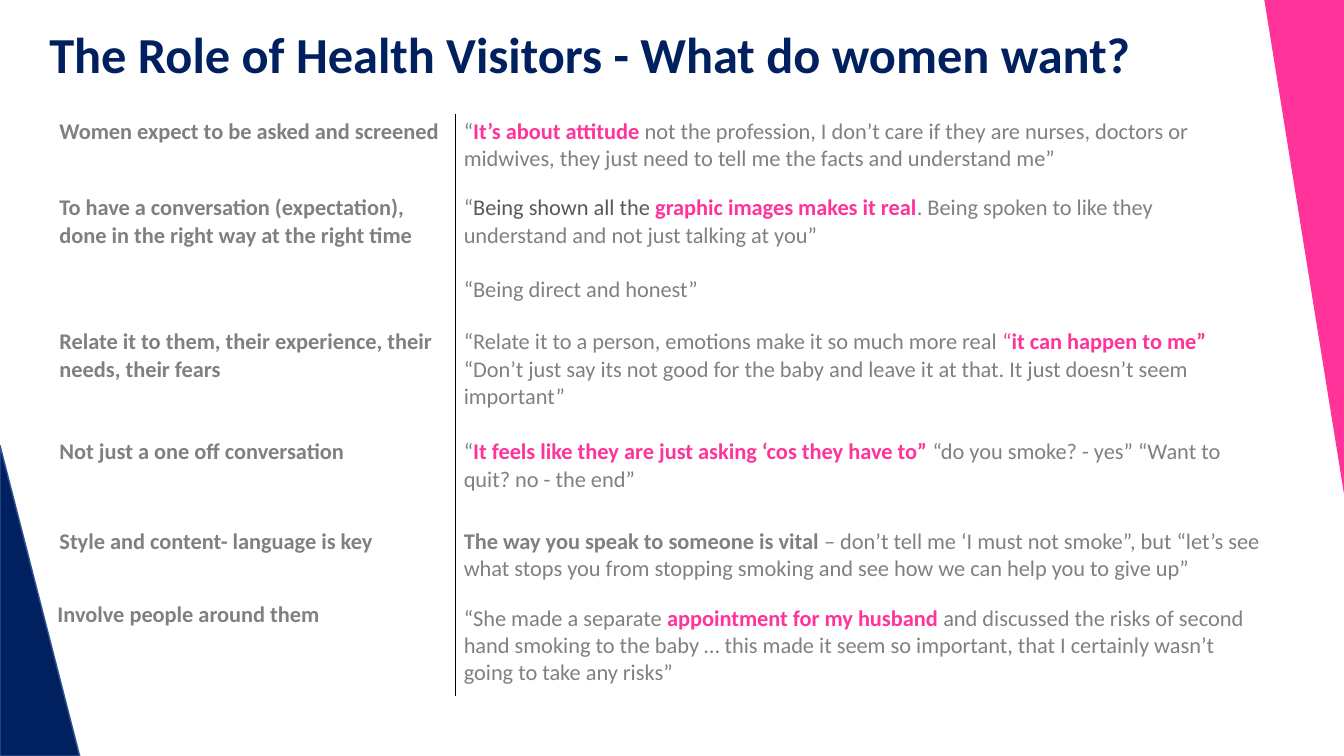
"""Build the slide on what women want from health visitors."""
from typing import Any, NamedTuple, Optional

from lxml import etree
from pptx import Presentation
from pptx import util as u
from pptx.dml.color import RGBColor
from pptx.enum import shapes, text
from pptx.oxml import ns

NAVY = RGBColor(0x00, 0x20, 0x60)
EDGE = RGBColor(0x32, 0x54, 0x91)
PINK = RGBColor(0xFF, 0x33, 0x99)
GREY = RGBColor(0x80, 0x80, 0x80)
DARK = RGBColor(0x59, 0x59, 0x59)
BLACK = RGBColor(0x00, 0x00, 0x00)

BODY = {"name": "Calibri", "size": u.Pt(16), "bold": False}
BOLD = {**BODY, "bold": True}
HEADING = {**BOLD, "size": u.Pt(36)}
NORMAL_INSETS = {"margin_left": u.Inches(0.08), "margin_right": u.Inches(0.08),
                 "margin_top": u.Inches(0.04), "margin_bottom": u.Inches(0.04)}
TIGHT_INSETS = {"margin_left": u.Inches(0.06), "margin_right": u.Inches(0.06),
                "margin_top": 0, "margin_bottom": 0}


class Run(NamedTuple):
    text: str
    color: RGBColor = GREY
    fmt: dict = BODY


class Para(NamedTuple):
    runs: list[Run]
    before: float = 0


class Row(NamedTuple):
    height: float
    theme: str
    quotes: list[Para]
    insets: dict = NORMAL_INSETS


class Triangle(NamedTuple):
    left: float
    top: float
    width: float
    height: float
    fill: RGBColor
    line: Optional[RGBColor] = None
    rotation: float = 0


def pink(words: str) -> Run:
    return Run(words, PINK, BOLD)


TRIANGLES = [
    Triangle(0, 4.42, 0.79, 3.08, NAVY, EDGE),
    Triangle(12.54, 0, 0.79, 4.9, PINK, rotation=180),
]
COLUMNS = [4.01, 8.07]
ROWS = [
    Row(0.76, "Women expect to be asked and screened", [Para([
        Run("“"), pink("It’s about attitude "),
        Run("not the profession, I don’t care if they are nurses, doctors or midwives, "
            "they just need to tell me the facts and understand me”")])]),
    Row(1.33, "To have a conversation (expectation), done in the right way at the right time", [
        Para([Run("“"), Run("Being shown all the ", DARK), pink("graphic images makes it real"),
              Run(". Being spoken to like they understand and not just talking at you”")]),
        Para([Run("“Being direct and honest”")], before=19.5)]),
    Row(1.09, "Relate it to them, their experience, their needs, their fears", [
        Para([Run("“Relate it to a person, emotions make it so much more real "),
              Run("“", PINK), pink("it can happen to me”")]),
        Para([Run("“Don’t just say its not good for the baby and leave it at that. "
                  "It just doesn’t seem important”")])]),
    Row(0.89, "Not just a one off conversation", [Para([
        Run("“"), pink("It feels like they are just asking ‘cos they have to” "),
        Run("“do you smoke? - yes” “Want to quit? no - the end”")])]),
    Row(0.76, "Style and content- language is key", [Para([
        Run("The way you speak to someone is vital ", fmt=BOLD),
        Run("– don’t tell me ‘I must not smoke”, but “let’s see what stops you from "
            "stopping smoking and see how we can help you to give up”")])]),
    Row(0.95, "Involve people around them", [Para([
        Run("“She made a separate "), pink("appointment for my husband "),
        Run("and discussed the risks of second hand smoking to the baby … this made it "
            "seem so important, that I certainly wasn’t going to take any risks”")])],
        TIGHT_INSETS),
]


def apply(obj: Any, values: dict) -> None:
    """Set every named attribute on the object."""
    for name, value in values.items():
        setattr(obj, name, value)


def write(tf: Any, paras: list[Para]) -> None:
    """Fill a text frame with formatted paragraphs."""
    for i, para in enumerate(paras):
        p = tf.paragraphs[0] if i == 0 else tf.add_paragraph()
        if para.before:
            p.space_before = u.Pt(para.before)
        for run in para.runs:
            r = p.add_run()
            r.text = run.text
            apply(r.font, run.fmt)
            r.font.color.rgb = run.color


def set_borders(cell: Any, visible: str) -> None:
    """Draw one side of a cell in black and clear the others."""
    tc_pr = cell._tc.get_or_add_tcPr()
    for side in ("lnL", "lnR", "lnT", "lnB"):
        ln = etree.SubElement(tc_pr, ns.qn(f"a:{side}"), w=str(u.Pt(1)))
        if side == visible:
            fill = etree.SubElement(ln, ns.qn("a:solidFill"))
            etree.SubElement(fill, ns.qn("a:srgbClr"), val=str(BLACK))
        else:
            etree.SubElement(ln, ns.qn("a:noFill"))


def add_triangle(s: Any, item: Triangle) -> None:
    """Add a corner triangle."""
    box = map(u.Inches, (item.left, item.top, item.width, item.height))
    sp = s.shapes.add_shape(shapes.MSO_SHAPE.RIGHT_TRIANGLE, *box)
    sp.shadow.inherit = False
    sp.rotation = item.rotation
    sp.fill.solid()
    sp.fill.fore_color.rgb = item.fill
    if item.line is None:
        sp.line.fill.background()
    else:
        sp.line.color.rgb = item.line
        sp.line.width = u.Pt(1)


def add_title(s: Any, words: str) -> None:
    """Add the slide heading."""
    sp = s.shapes.add_textbox(*map(u.Inches, (0.39, 0.11, 11.78, 0.92)))
    tf = sp.text_frame
    apply(tf, {"word_wrap": True, "vertical_anchor": text.MSO_ANCHOR.MIDDLE})
    write(tf, [Para([Run(words, NAVY, HEADING)])])
    tf.paragraphs[0].line_spacing = 0.9


def add_quotes(s: Any) -> None:
    """Add the table of themes and quotations."""
    size = (sum(COLUMNS), sum(row.height for row in ROWS))
    table = s.shapes.add_table(len(ROWS), len(COLUMNS),
                               *map(u.Inches, (0.51, 1.13, *size))).table
    apply(table, {"first_row": False, "horz_banding": False})
    for column, width in zip(table.columns, COLUMNS):
        column.width = u.Inches(width)
    for i, row in enumerate(ROWS):
        table.rows[i].height = u.Inches(row.height)
        theme = [Para([Run(row.theme, fmt=BOLD)])]
        parts = [(theme, row.insets, "lnR"), (row.quotes, NORMAL_INSETS, "lnL")]
        for j, (paras, insets, side) in enumerate(parts):
            cell = table.cell(i, j)
            apply(cell, insets)
            set_borders(cell, side)
            cell.fill.background()
            write(cell.text_frame, paras)


def main() -> None:
    """Create and save the slide."""
    prs = Presentation()
    apply(prs, {"slide_width": u.Inches(13.33), "slide_height": u.Inches(7.5)})
    s = prs.slides.add_slide(prs.slide_layouts[6])
    for item in TRIANGLES:
        add_triangle(s, item)
    add_title(s, "The Role of Health Visitors - What do women want?")
    add_quotes(s)
    prs.save("out.pptx")


if __name__ == "__main__":
    main()
